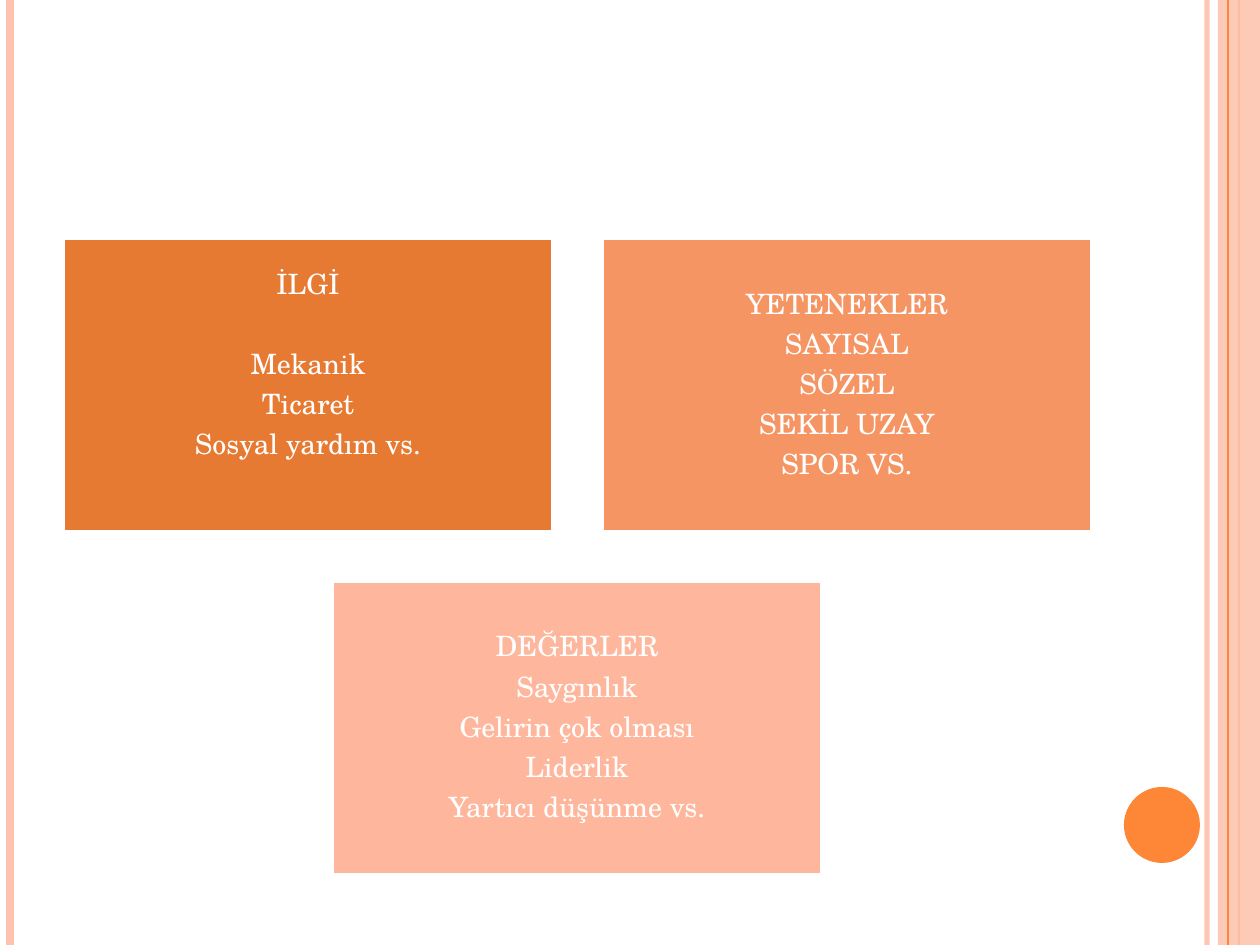
from lxml.etree import SubElement
from pptx import Presentation
from pptx.dml.color import RGBColor
from pptx.enum.shapes import MSO_CONNECTOR, MSO_SHAPE
from pptx.enum.text import MSO_ANCHOR, PP_ALIGN
from pptx.oxml.ns import qn
from pptx.util import Pt

PX = 914400 // 126
WIDTH, HEIGHT = 1260, 945
FONT = "TeX Gyre Schola"
WHITE = RGBColor(0xFF, 0xFF, 0xFF)
PINK = RGBColor(0xFE, 0xC3, 0xAE)
ORANGE = RGBColor(0xFE, 0x86, 0x37)
DARK = RGBColor(0xE7, 0x7A, 0x32)
MEDIUM = RGBColor(0xF6, 0x95, 0x64)
LIGHT = RGBColor(0xFE, 0xB7, 0x9C)

BOX_W, BOX_H, GAP = 490, 294, 49
LEFT, TOP, INSET = 63, 238, 9
LINE_STEP = 40
SPACE_AFTER, HEADING_SPACE = 5.6, 28.5


def px(n):
    return n * PX


def set_opacity(fill, percent):
    color = next(fill.iter(qn("a:srgbClr")))
    SubElement(color, qn("a:alpha")).set("val", str(percent * 1000))


def add_stripe(s, x, color, width, opacity=100):
    line = s.shapes.add_connector(MSO_CONNECTOR.STRAIGHT, px(x), 0, px(x), px(HEIGHT))
    line.line.color.rgb = color
    line.line.width = Pt(width)
    sp_pr = line._element.spPr
    if opacity < 100:
        set_opacity(sp_pr, opacity)
    SubElement(sp_pr, qn("a:effectLst"))


def add_shape(s, kind, x, y, w, h, color):
    sp = s.shapes.add_shape(kind, px(x), px(y), px(w), px(h))
    sp.shadow.inherit = False
    sp.fill.solid()
    sp.fill.fore_color.rgb = color
    sp.line.fill.background()
    return sp


def add_box(s, x, y, color, lines, heading_apart=False):
    sp = add_shape(s, MSO_SHAPE.RECTANGLE, x, y, BOX_W, BOX_H, color)
    sp.line.color.rgb = WHITE
    sp.line.width = Pt(2)
    tf = sp.text_frame
    tf.word_wrap = True
    tf.vertical_anchor = MSO_ANCHOR.MIDDLE
    tf.margin_left = tf.margin_right = tf.margin_top = px(INSET)
    tf.margin_bottom = px(INSET + LINE_STEP if heading_apart else INSET)
    for i, text in enumerate(lines):
        p = tf.add_paragraph() if i else tf.paragraphs[0]
        p.alignment = PP_ALIGN.CENTER
        p.line_spacing = 0.9
        p.space_after = Pt(HEADING_SPACE if heading_apart and i == 0 else SPACE_AFTER)
        r = p.add_run()
        r.text = text
        r.font.name = FONT
        r.font.size = Pt(16)
        r.font.color.rgb = WHITE


def add_frame(s):
    add_stripe(s, 1207, PINK, 3, 93)
    add_stripe(s, 10, PINK, 4.5)
    add_stripe(s, 1239, ORANGE, 1.5)
    band = add_shape(s, MSO_SHAPE.RECTANGLE, 1218, 0, WIDTH - 1218, HEIGHT, PINK)
    set_opacity(band._element.spPr, 87)
    add_stripe(s, 1228, ORANGE, 0.75)
    add_shape(s, MSO_SHAPE.OVAL, 1124, 787, 76, 76, ORANGE)


def main():
    prs = Presentation()
    prs.slide_width, prs.slide_height = px(WIDTH), px(HEIGHT)
    s = prs.slides.add_slide(prs.slide_layouts[6])
    add_frame(s)
    step_x, step_y = BOX_W + GAP, BOX_H + GAP
    add_box(s, LEFT, TOP, DARK,
            ["İLGİ", "Mekanik", "Ticaret", "Sosyal yardım vs."], heading_apart=True)
    add_box(s, LEFT + step_x, TOP, MEDIUM,
            ["YETENEKLER", "SAYISAL", "SÖZEL", "SEKİL UZAY", "SPOR VS."])
    add_box(s, LEFT + step_x // 2, TOP + step_y, LIGHT,
            ["DEĞERLER", "Saygınlık", "Gelirin çok olması", "Liderlik",
             "Yartıcı düşünme vs."])
    prs.save("out.pptx")


if __name__ == "__main__":
    main()
